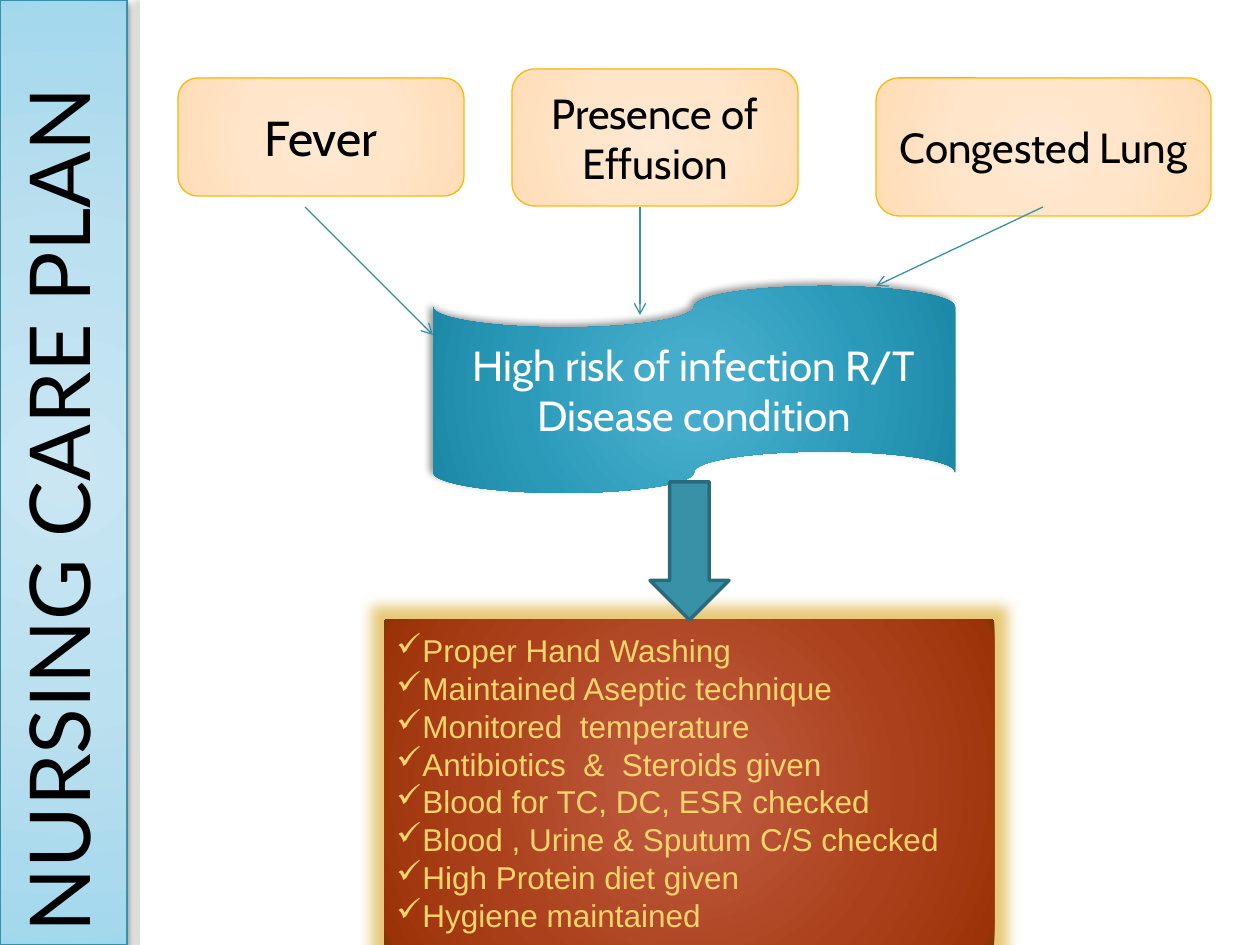
import pptx
import pptx.util
import pptx.dml.color
import pptx.enum.shapes
import pptx.enum.text
import pptx.oxml
import pptx.oxml.ns

SCALE = 914400 / 126
RGB = pptx.dml.color.RGBColor
KIND = pptx.enum.shapes.MSO_SHAPE
ALIGN = pptx.enum.text.PP_ALIGN
ANCHOR = pptx.enum.text.MSO_ANCHOR
SPACE = pptx.oxml.ns.nsdecls("a")

BLACK = RGB(0x00, 0x00, 0x00)
WHITE = RGB(0xFF, 0xFF, 0xFF)
TEAL = RGB(0x38, 0x91, 0xA7)
DARK = RGB(0x29, 0x6B, 0x7C)
GOLD = RGB(0xFE, 0xB8, 0x0A)
SAND = RGB(0xFE, 0xD4, 0x6C)
PEACH = [(0, "FFE9D3"), (50, "FFE5C9"), (97, "FFDDB7"), (100, "FFDBB2")]
BLUE = [(0, "45ACCC"), (15, "45ACCB"), (62, "2B9AB9"), (97, "1C8AA7"), (100, "0E89A7")]
RUST = [(0, "BD583A"), (15, "BC573A"), (62, "AB411C"), (97, "9C3308"), (100, "7E3600")]
SKY = [(0, "C9E6F2"), (50, "BBE0EF"), (97, "A4D8ED"), (100, "9BD7EE")]


def px(num):
    return pptx.util.Emu(round(num * SCALE))


def draw(kind, box, fill, line=None, width=0.75, fx=""):
    shape = slide.shapes.add_shape(kind, *[px(num) for num in box])
    shape.shadow.inherit = False
    if line is None:
        shape.line.fill.background()
    else:
        shape.line.color.rgb = line
        shape.line.width = pptx.util.Pt(width)
    if isinstance(fill, list):
        shape.fill.background()
        stops = "".join(
            f'<a:gs pos="{pos * 1000}"><a:srgbClr val="{tone}"/></a:gs>' for pos, tone in fill
        )
        grad = pptx.oxml.parse_xml(
            f'<a:gradFill {SPACE} rotWithShape="1"><a:gsLst>{stops}</a:gsLst><a:path path="circle">'
            '<a:fillToRect l="50000" t="50000" r="50000" b="50000"/></a:path></a:gradFill>'
        )
        props = shape._element.spPr
        props.replace(props.find(pptx.oxml.ns.qn("a:noFill")), grad)
    else:
        shape.fill.solid()
        shape.fill.fore_color.rgb = fill
    if fx:
        old = shape._element.spPr.find(pptx.oxml.ns.qn("a:effectLst"))
        old.append(pptx.oxml.parse_xml(fx))
    return shape


def write(shape, lines, size, font, tone, align=ALIGN.CENTER):
    frame = shape.text_frame
    frame.word_wrap = True
    frame.vertical_anchor = ANCHOR.MIDDLE
    for i, line in enumerate(lines):
        para = frame.paragraphs[0] if i == 0 else frame.add_paragraph()
        para.alignment = align
        run = para.add_run()
        run.text = line
        run.font.size = pptx.util.Pt(size)
        run.font.name = font
        run.font.color.rgb = tone
    return frame


deck = pptx.Presentation()
deck.slide_width = px(1260)
deck.slide_height = px(945)
slide = deck.slides.add_slide(deck.slide_layouts[6])

shade = (
    f'<a:outerShdw {SPACE} blurRad="%d" dist="%d" dir="%d" algn="tl" rotWithShape="0">'
    '<a:srgbClr val="%s"><a:alpha val="%d"/></a:srgbClr></a:outerShdw>'
)
glow = (
    f'<a:glow {SPACE} rad="190500"><a:srgbClr val="D9A520">'
    '<a:alpha val="60000"/></a:srgbClr></a:glow>'
)

draw(KIND.RECTANGLE, (140, 0, 10, 945), WHITE,
     fx=shade % (38100, 38100, 10800000, "736F63", 25000))

causes = [
    ("Fever", (178, 78, 286, 118), 28),
    ("Presence of Effusion", (512, 69, 286, 137), 24),
    ("Congested Lung", (876, 78, 335, 138), 24),
]
for text, box, size in causes:
    write(draw(KIND.ROUNDED_RECTANGLE, box, PEACH, GOLD), [text], size, "Cabin", BLACK)

tape = draw(KIND.FLOWCHART_PUNCHED_TAPE, (433, 286, 522, 207), BLUE,
            fx=shade % (50800, 38100, 13500000, "000000", 40000))
write(tape, ["High risk of infection R/T", "Disease condition"], 24, "Cabin", WHITE)

care = draw(KIND.LINE_CALLOUT_3_BORDER_AND_ACCENT_BAR, (384, 620, 610, 325), RUST, fx=glow)
tasks = [
    "Proper Hand Washing",
    "Maintained Aseptic technique",
    "Monitored  temperature",
    "Antibiotics  &  Steroids given",
    "Blood for TC, DC, ESR checked",
    "Blood , Urine & Sputum C/S checked",
    "High Protein diet given",
    "Hygiene maintained",
]
for para in write(care, tasks, 18, "Arial", SAND, ALIGN.LEFT).paragraphs:
    props = para._p.get_or_add_pPr()
    props.set("marL", str(px(26)))
    props.set("indent", str(-px(26)))
    props.append(pptx.oxml.parse_xml(f'<a:buChar {SPACE} char="✓"/>'))

for ends in [(305, 207, 433, 335), (640, 207, 640, 315), (1043, 207, 876, 286)]:
    link = slide.shapes.add_connector(
        pptx.enum.shapes.MSO_CONNECTOR.STRAIGHT, *[px(num) for num in ends]
    )
    link.line.color.rgb = TEAL
    link.line.width = pptx.util.Pt(0.75)
    link.line._get_or_add_ln().append(pptx.oxml.parse_xml(f'<a:tailEnd {SPACE} type="arrow"/>'))
    link._element.spPr.append(pptx.oxml.parse_xml(f"<a:effectLst {SPACE}/>"))

draw(KIND.DOWN_ARROW, (650, 482, 79, 138), TEAL, DARK, 2)

side = draw(KIND.RECTANGLE, (0, 0, 127, 945), SKY, TEAL,
            fx=shade % (63500, 25400, 5400000, "000000", 43000))
title = write(side, ["NURSING CARE PLAN"], 48, "Lato", BLACK, ALIGN.LEFT)
title.vertical_anchor = ANCHOR.TOP
title._txBody.bodyPr.set("vert", "vert270")

deck.save("out.pptx")
